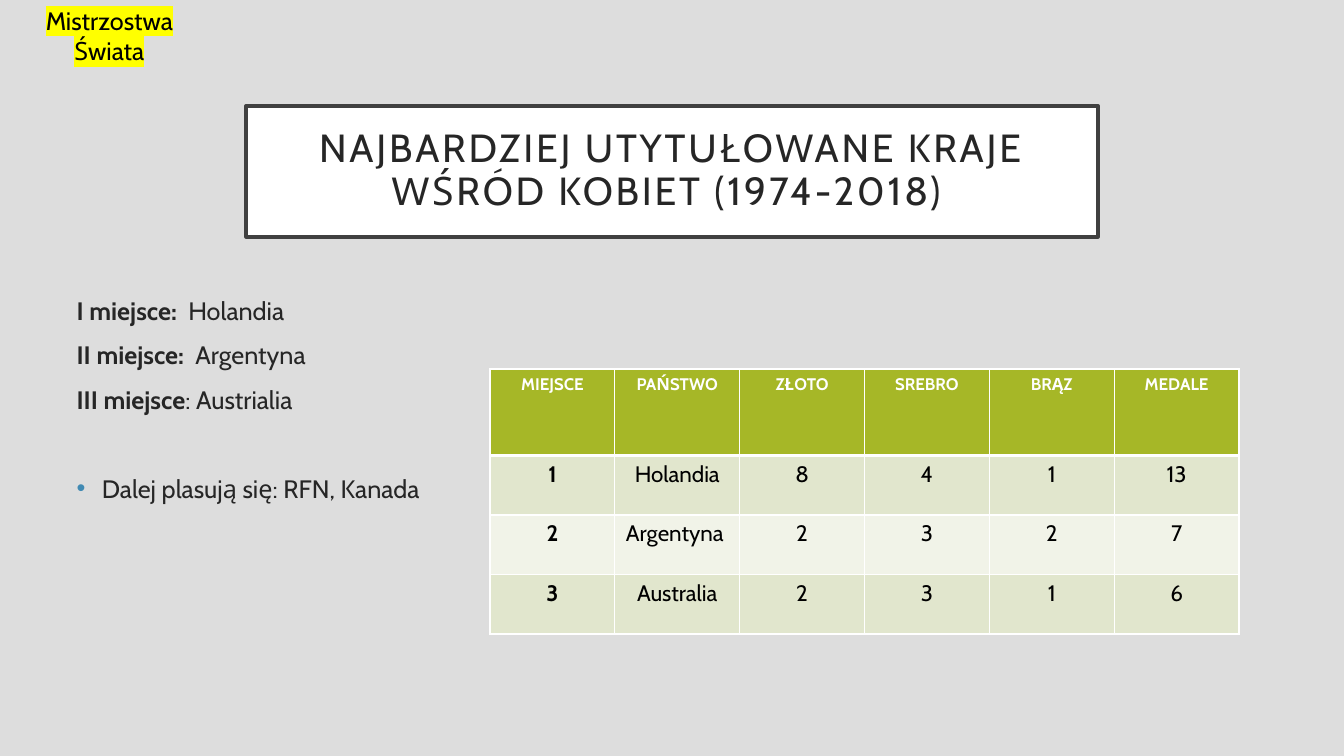
from lxml.etree import SubElement
from pptx import Presentation
from pptx.dml.color import RGBColor
from pptx.enum.text import MSO_ANCHOR as Anchor, MSO_AUTO_SIZE as AutoSize, PP_ALIGN as Align
from pptx.oxml.ns import qn
from pptx.util import Inches, Pt

COLORS = {
    "background": "DDDDDD", "white": "FFFFFF", "frame": "404040",
    "text": "262626", "black": "000000", "bullet": "418AB3",
    "header": "A6B727", "band": "E1E6CD", "light band": "F1F3E8",
    "highlight": "FFFF00",
}


def color(name):
    return RGBColor.from_string(COLORS[name])


def add_run(paragraph, text, size, color_name, bold=False):
    run = paragraph.add_run()
    run.text = text
    run.font.name = "Cabin"
    run.font.size = Pt(size)
    run.font.bold = bold
    run.font.color.rgb = color(color_name)
    return run


prs = Presentation()
prs.slide_width, prs.slide_height = Inches(13.33), Inches(7.5)
slide = prs.slides.add_slide(prs.slide_layouts[1])
slide.background.fill.solid()
slide.background.fill.fore_color.rgb = color("background")

# Framed title
title = slide.shapes.title
title.left, title.top = Inches(2.44), Inches(1.05)
title.width, title.height = Inches(8.45), Inches(1.3)
title.fill.solid()
title.fill.fore_color.rgb = color("white")
title.line.color.rgb = color("frame")
title.line.width = Pt(2.5)
heading = title.text_frame
heading.word_wrap = True
heading.auto_size = AutoSize.NONE
heading.vertical_anchor = Anchor.MIDDLE
heading.margin_left = heading.margin_right = Inches(0.2)
heading.margin_top = heading.margin_bottom = Inches(0.2)
heading_line = heading.paragraphs[0]
heading_line.alignment = Align.CENTER
heading_line.line_spacing = 0.9
heading_runs = [add_run(heading_line, "NAJBARDZIEJ UTYTUŁOWANE KRAJE", 28, "text")]
heading_line.add_line_break()
heading_runs.append(add_run(heading_line, "WŚRÓD KOBIET (1974-2018) ", 28, "text"))
for run in heading_runs:
    run.font._element.set("spc", "200")

# Podium list: bold part, regular part, space before, bulleted
podium = [
    ("I miejsce:  ", "Holandia", 10, False),
    ("II miejsce:  ", "Argentyna", 10, False),
    ("III miejsce", ": Austrialia", 10, False),
    ("", "Dalej plasują się: RFN, Kanada", 42, True),
]
ranking = slide.placeholders[1]
ranking.left, ranking.top = Inches(0.66), Inches(2.88)
ranking.width, ranking.height = Inches(10.23), Inches(3.39)
ranking.text_frame.auto_size = AutoSize.NONE
for i, (place, country, space, bulleted) in enumerate(podium):
    line = ranking.text_frame.paragraphs[0] if i == 0 else ranking.text_frame.add_paragraph()
    line.alignment = Align.LEFT
    line.space_before = Pt(space)
    if place:
        add_run(line, place, 18, "text", bold=True)
    add_run(line, country, 18, "text")
    props = line._p.get_or_add_pPr()
    indent = Inches(0.25) if bulleted else 0
    props.set("marL", str(indent))
    props.set("indent", str(-indent))
    if bulleted:
        bullet_color = SubElement(props, qn("a:buClr"))
        SubElement(bullet_color, qn("a:srgbClr"), val=COLORS["bullet"])
        SubElement(props, qn("a:buFont"), typeface="Arial")
        SubElement(props, qn("a:buChar"), char="•")
    else:
        SubElement(props, qn("a:buNone"))

# Medal table
medals = [
    ["MIEJSCE", "PAŃSTWO", "ZŁOTO", "SREBRO", "BRĄZ", "MEDALE"],
    ["1", "Holandia", "8", "4", "1", "13"],
    ["2", "Argentyna ", "2", "3", "2", "7"],
    ["3", "Australia", "2", "3", "1", "6"],
]
row_fills = ["header", "band", "light band", "band"]
medal_table = slide.shapes.add_table(
    len(medals), len(medals[0]), Inches(4.86), Inches(3.66), Inches(7.43), Inches(2.62)
).table
for r, values in enumerate(medals):
    is_header = r == 0
    medal_table.rows[r].height = Inches(0.86 if is_header else 0.59)
    for c, value in enumerate(values):
        cell = medal_table.cell(r, c)
        entry = cell.text_frame.paragraphs[0]
        entry.alignment = Align.CENTER
        add_run(entry, value, 12 if is_header else 16,
                "white" if is_header else "black", bold=is_header or c == 0)
        borders = {"a:lnL": 1, "a:lnR": 1, "a:lnT": 3 if r == 1 else 1,
                   "a:lnB": 3 if is_header else 1}
        for side, width in borders.items():
            border = SubElement(cell._tc.get_or_add_tcPr(), qn(side), w=str(Pt(width)))
            SubElement(SubElement(border, qn("a:solidFill")), qn("a:srgbClr"),
                       val=COLORS["white"])
        cell.fill.solid()
        cell.fill.fore_color.rgb = color(row_fills[r])

# Highlighted event label in the corner
event = slide.shapes.add_textbox(0, 0, Inches(2.17), Inches(0.4)).text_frame
event.word_wrap = True
event.auto_size = AutoSize.SHAPE_TO_FIT_TEXT
event.paragraphs[0].alignment = Align.CENTER
event_run = add_run(event.paragraphs[0], "Mistrzostwa Świata", 18, "black")
run_props = event_run.font._element
highlight = SubElement(run_props, qn("a:highlight"))
SubElement(highlight, qn("a:srgbClr"), val=COLORS["highlight"])
run_props.find(qn("a:solidFill")).addnext(highlight)

prs.save("out.pptx")
